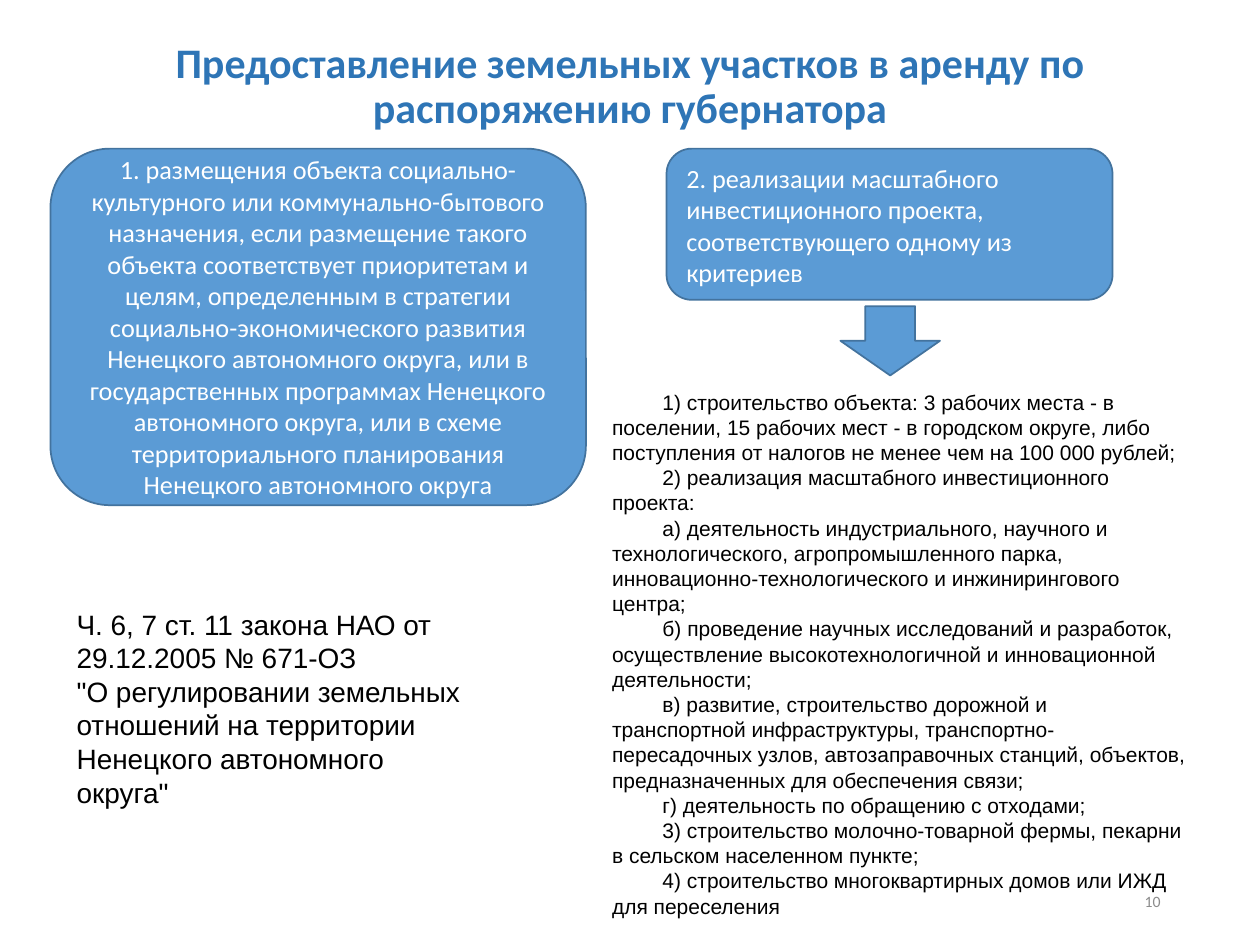
from pptx import Presentation
from pptx.dml.color import RGBColor
from pptx.enum import shapes, text
from pptx.util import Inches, Pt

HUES = {"title": "2E75B6", "fill": "5B9BD5", "line": "43739E",
        "white": "FFFFFF", "black": "000000", "grey": "8C8C8C"}
KIND = shapes.MSO_SHAPE
SIDE = text.PP_ALIGN
ANCHOR = text.MSO_ANCHOR
FIT = text.MSO_AUTO_SIZE

GOALS = (
    "1. размещения объекта социально-культурного или коммунально-бытового "
    "назначения, если размещение такого объекта соответствует приоритетам и "
    "целям, определенным в стратегии социально-экономического развития "
    "Ненецкого автономного округа, или в государственных программах Ненецкого "
    "автономного округа, или в схеме территориального планирования Ненецкого "
    "автономного округа")
PROJECT = ("2. реализации масштабного инвестиционного проекта, "
           "соответствующего одному из критериев")
RULES = [
    "1) строительство объекта: 3 рабочих места - в поселении, 15 рабочих мест "
    "- в городском округе, либо поступления от налогов не менее чем на "
    "100 000 рублей;",
    "2) реализация масштабного инвестиционного проекта:",
    "а) деятельность индустриального, научного и технологического, "
    "агропромышленного парка, инновационно-технологического и "
    "инжинирингового центра;",
    "б) проведение научных исследований и разработок, осуществление "
    "высокотехнологичной и инновационной деятельности;",
    "в) развитие, строительство дорожной и транспортной инфраструктуры, "
    "транспортно-пересадочных узлов, автозаправочных станций, объектов, "
    "предназначенных для обеспечения связи;",
    "г) деятельность по обращению с отходами;",
    "3) строительство молочно-товарной фермы, пекарни в сельском населенном "
    "пункте;",
    "4) строительство многоквартирных домов или ИЖД для переселения",
]
LAW = [
    "Ч. 6, 7 ст. 11 закона НАО от 29.12.2005 № 671-ОЗ",
    '"О регулировании земельных отношений на территории Ненецкого '
    'автономного округа"',
]


def color(name):
    return RGBColor.from_string(HUES[name])


def write(shape, lines, size, face, hue, side=SIDE.LEFT, anchor=ANCHOR.TOP,
          indent=0):
    frame = shape.text_frame
    frame.word_wrap = True
    frame.vertical_anchor = anchor
    frame.text = "\n".join(lines)
    for para in frame.paragraphs:
        para.alignment = side
        para.font.size = Pt(size)
        para.font.name = face
        para.font.color.rgb = color(hue)
        if indent:
            props = para._p.get_or_add_pPr()
            props.set("marL", "0")
            props.set("indent", str(Inches(indent)))
    return frame


def add_title(slide, words):
    title = slide.shapes.title
    title.left, title.top = Inches(0.69), Inches(0.21)
    title.width, title.height = Inches(8.62), Inches(0.97)
    frame = write(title, [words], 24, "Calibri", "title", SIDE.CENTER,
                  ANCHOR.MIDDLE)
    frame.auto_size = FIT.NONE
    para = frame.paragraphs[0]
    para.font.bold = True
    para.line_spacing = 0.9


def add_block(slide, kind, box):
    block = slide.shapes.add_shape(kind, *map(Inches, box))
    block.shadow.inherit = False
    block.fill.solid()
    block.fill.fore_color.rgb = color("fill")
    block.line.color.rgb = color("line")
    block.line.width = Pt(1)
    return block


def add_text(slide, box, lines, size, face="Arial", hue="black",
             fit=FIT.SHAPE_TO_FIT_TEXT, **style):
    note = slide.shapes.add_textbox(*map(Inches, box))
    write(note, lines, size, face, hue, **style).auto_size = fit


def main():
    deck = Presentation()
    deck.slide_width, deck.slide_height = Inches(10), Inches(7.5)
    slide = deck.slides.add_slide(deck.slide_layouts[5])

    # Heading and slide number
    add_title(slide, "Предоставление земельных участков в аренду по "
                     "распоряжению губернатора")
    add_text(slide, (7.06, 6.95, 2.25, 0.4), ["10"], 9, "Calibri", "grey",
             FIT.NONE, side=SIDE.RIGHT, anchor=ANCHOR.MIDDLE)

    # Two grounds for a lease
    goals = add_block(slide, KIND.ROUNDED_RECTANGLE, (0.4, 1.18, 4.25, 2.83))
    write(goals, [GOALS], 15, "Calibri", "white", SIDE.CENTER, ANCHOR.MIDDLE)
    project = add_block(slide, KIND.ROUNDED_RECTANGLE, (5.29, 1.18, 3.54, 1.2))
    write(project, [PROJECT], 15, "Calibri", "white")

    # Criteria below the arrow, and the law they come from
    add_block(slide, KIND.DOWN_ARROW, (6.67, 2.43, 0.79, 0.55))
    add_text(slide, (4.76, 3.04, 4.76, 4.34), RULES, 12, indent=0.4)
    add_text(slide, (0.51, 4.77, 3.39, 1.72), LAW, 16)

    deck.save("out.pptx")


if __name__ == "__main__":
    main()
